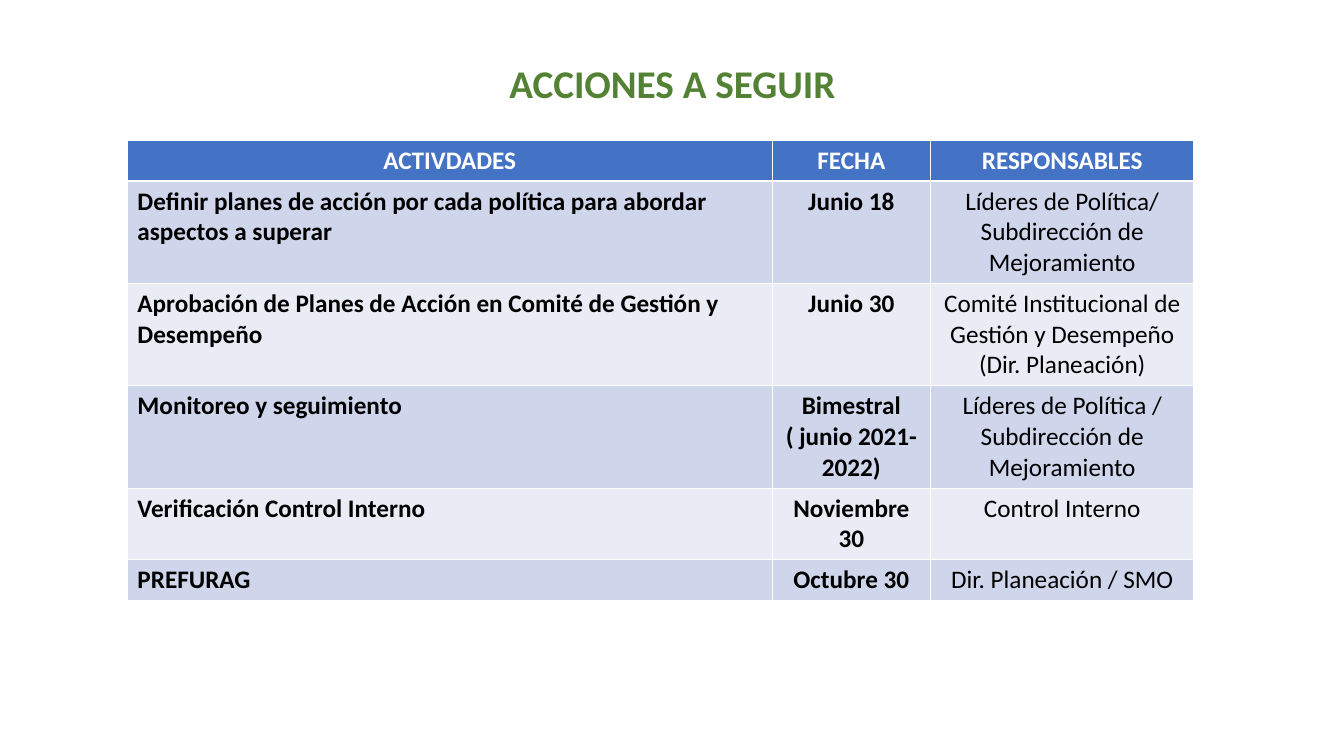
from pptx import Presentation
from pptx import util as u
from pptx.dml.color import RGBColor
from pptx.enum import text

CENTER, LEFT = text.PP_ALIGN.CENTER, text.PP_ALIGN.LEFT


def rgb(value):
    return RGBColor.from_string(value)


def style(p, size, color, bold, align):
    p.alignment = align
    for r in p.runs:
        r.font.name = "Calibri"
        r.font.size = u.Pt(size)
        r.font.bold = bold
        r.font.color.rgb = rgb(color)


prs = Presentation()
prs.slide_width, prs.slide_height = u.Cm(33.87), u.Cm(19.05)
s = prs.slides.add_slide(prs.slide_layouts[5])

# Title
title = s.shapes.title
title.left, title.top = u.Cm(12.17), u.Cm(1.37)
title.width, title.height = u.Cm(9.55), u.Cm(1.45)
tf = title.text_frame
tf.text = "ACCIONES A SEGUIR"
tf.word_wrap = False
tf.vertical_anchor = text.MSO_ANCHOR.TOP
style(tf.paragraphs[0], 28, "548235", True, CENTER)

# Table content: activity, date, people in charge
rows = [
    ("ACTIVDADES", "FECHA", "RESPONSABLES"),
    ("Definir planes de acción por cada política para abordar aspectos a superar",
     "Junio 18", "Líderes de Política/\nSubdirección de Mejoramiento"),
    ("Aprobación de Planes de Acción en Comité de Gestión y Desempeño",
     "Junio 30", "Comité Institucional de Gestión y Desempeño\n(Dir. Planeación)"),
    ("Monitoreo y seguimiento", "Bimestral\n( junio 2021-2022)",
     "Líderes de Política / Subdirección de Mejoramiento"),
    ("Verificación Control Interno", "Noviembre 30", "Control Interno"),
    ("PREFURAG", "Octubre 30", "Dir. Planeación / SMO"),
]
widths = [16.25, 3.99, 6.64]
row_height = 1.03

# Table: white borders come from the default table style
table = s.shapes.add_table(len(rows), len(widths), u.Cm(3.21), u.Cm(3.53),
                           u.Cm(sum(widths)), u.Cm(row_height * len(rows))).table
for column, width in zip(table.columns, widths):
    column.width = u.Cm(width)

for i, row in enumerate(rows):
    table.rows[i].height = u.Cm(row_height)
    header = i == 0
    fill = "4472C4" if header else ("E9EBF5", "CFD5EA")[i % 2]
    for j, content in enumerate(row):
        cell = table.cell(i, j)
        cell.fill.solid()
        cell.fill.fore_color.rgb = rgb(fill)
        cell.text_frame.text = content
        for p in cell.text_frame.paragraphs:
            style(p, 18, "FFFFFF" if header else "000000", header or j < 2,
                  CENTER if header or j else LEFT)

prs.save("out.pptx")
